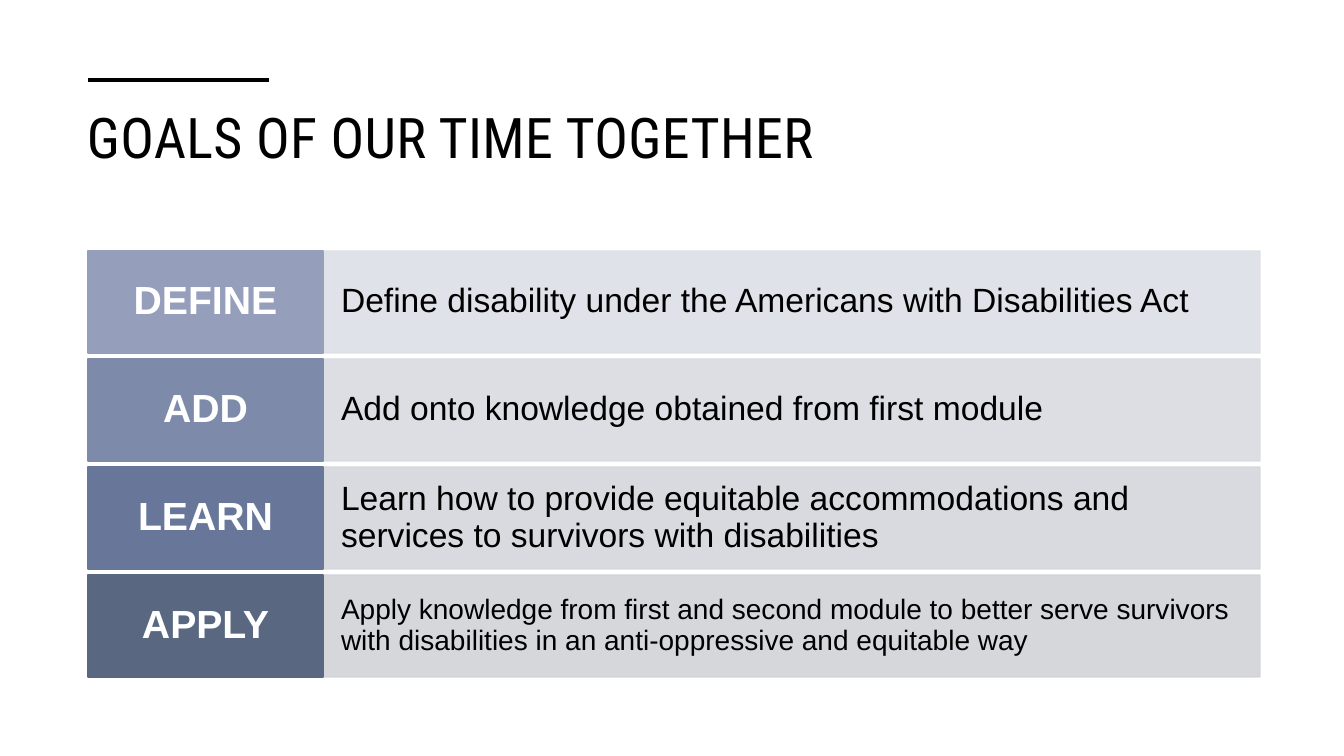
"""Builds the slide that lists four goals of the session."""
import dataclasses
import pptx
import pptx.dml.color
import pptx.enum.shapes
import pptx.enum.text
import pptx.oxml.ns
import pptx.util
from lxml import etree

SCALE = 914400 / 100.8
ALIGN = pptx.enum.text.PP_ALIGN
ANCHOR = pptx.enum.text.MSO_ANCHOR


@dataclasses.dataclass(frozen=True)
class Theme:
    ink: str = "000000"
    paper: str = "FFFFFF"
    labels: tuple = ("959EBB", "7E8AAA", "687799", "596781")
    bands: tuple = ("DDDFE7", "D9DBE2", "D5D7DD", "D1D3D8")
    head: str = "Roboto Condensed"
    body: str = "Arial"
    title: int = 40
    label: int = 28
    large: int = 24
    small: int = 20


def px(n):
    return pptx.util.Emu(round(n * SCALE))


def rgb(code):
    return pptx.dml.color.RGBColor.from_string(code)


class Deck:
    def __init__(self, theme):
        self.theme = theme
        self.file = pptx.Presentation()
        self.file.slide_width, self.file.slide_height = px(1344), px(756)
        self.slide = self.file.slides.add_slide(self.file.slide_layouts[6])

    def letter(self, shape, text, size, font, color, pad, anchor, align=ALIGN.LEFT,
               bold=False, lead=1.0, track=0):
        frame = shape.text_frame
        frame.word_wrap = True
        frame.vertical_anchor = anchor
        frame.margin_left = frame.margin_right = px(pad[0])
        frame.margin_top = frame.margin_bottom = px(pad[1])
        para = frame.paragraphs[0]
        para.alignment, para.line_spacing = align, lead
        run = para.add_run()
        run.text = text
        run.font.size, run.font.name = pptx.util.Pt(size), font
        run.font.bold, run.font.color.rgb = bold, rgb(color)
        if track:
            run.font._element.set("spc", str(track))

    def title(self, text, x, y, w, h):
        box = self.slide.shapes.add_textbox(px(x), px(y), px(w), px(h))
        self.letter(box, text, self.theme.title, self.theme.head, self.theme.ink,
                    (10, 5), ANCHOR.TOP, track=30)

    def rule(self, x, y, w, weight):
        kind = pptx.enum.shapes.MSO_CONNECTOR.STRAIGHT
        line = self.slide.shapes.add_connector(kind, px(x), px(y), px(x + w), px(y))
        line.line.color.rgb = rgb(self.theme.ink)
        line.line.width = pptx.util.Pt(weight)
        etree.SubElement(line._element.spPr, pptx.oxml.ns.qn("a:effectLst"))

    def block(self, x, y, w, h, color, alpha=100):
        kind = pptx.enum.shapes.MSO_SHAPE.RECTANGLE
        shape = self.slide.shapes.add_shape(kind, px(x), px(y), px(w), px(h))
        shape.shadow.inherit = False
        shape.fill.solid()
        shape.fill.fore_color.rgb = shape.line.color.rgb = rgb(color)
        shape.line.width = pptx.util.Pt(1)
        if alpha < 100:
            for node in shape._element.spPr.iter(pptx.oxml.ns.qn("a:srgbClr")):
                etree.SubElement(node, pptx.oxml.ns.qn("a:alpha"), val=str(alpha * 1000))
        return shape

    def goal(self, y, h, verb, text, size, dark, light):
        band = self.block(323, y, 937, h, light, 90)
        self.letter(band, text, size, self.theme.body, self.theme.ink,
                    (18, 26), ANCHOR.MIDDLE, lead=0.9)
        label = self.block(88, y, 235, h, dark)
        self.letter(label, verb, self.theme.label, self.theme.body, self.theme.paper,
                    (12, 10), ANCHOR.MIDDLE, ALIGN.CENTER, True, 0.9)


def main():
    theme = Theme()
    deck = Deck(theme)
    deck.title("GOALS OF OUR TIME TOGETHER", 77, 98, 1190, 116)
    deck.rule(88, 80, 181, 3.5)
    goals = (
        ("DEFINE", "Define disability under the Americans with Disabilities Act", theme.large),
        ("ADD", "Add onto knowledge obtained from first module", theme.large),
        ("LEARN", "Learn how to provide equitable accommodations and services "
                  "to survivors with disabilities", theme.large),
        ("APPLY", "Apply knowledge from first and second module to better serve "
                  "survivors with disabilities in an anti-oppressive and equitable way",
         theme.small),
    )
    for i, (goal, dark, light) in enumerate(zip(goals, theme.labels, theme.bands)):
        deck.goal(251 + 108 * i, 102, *goal, dark, light)
    deck.file.save("out.pptx")


if __name__ == "__main__":
    main()
